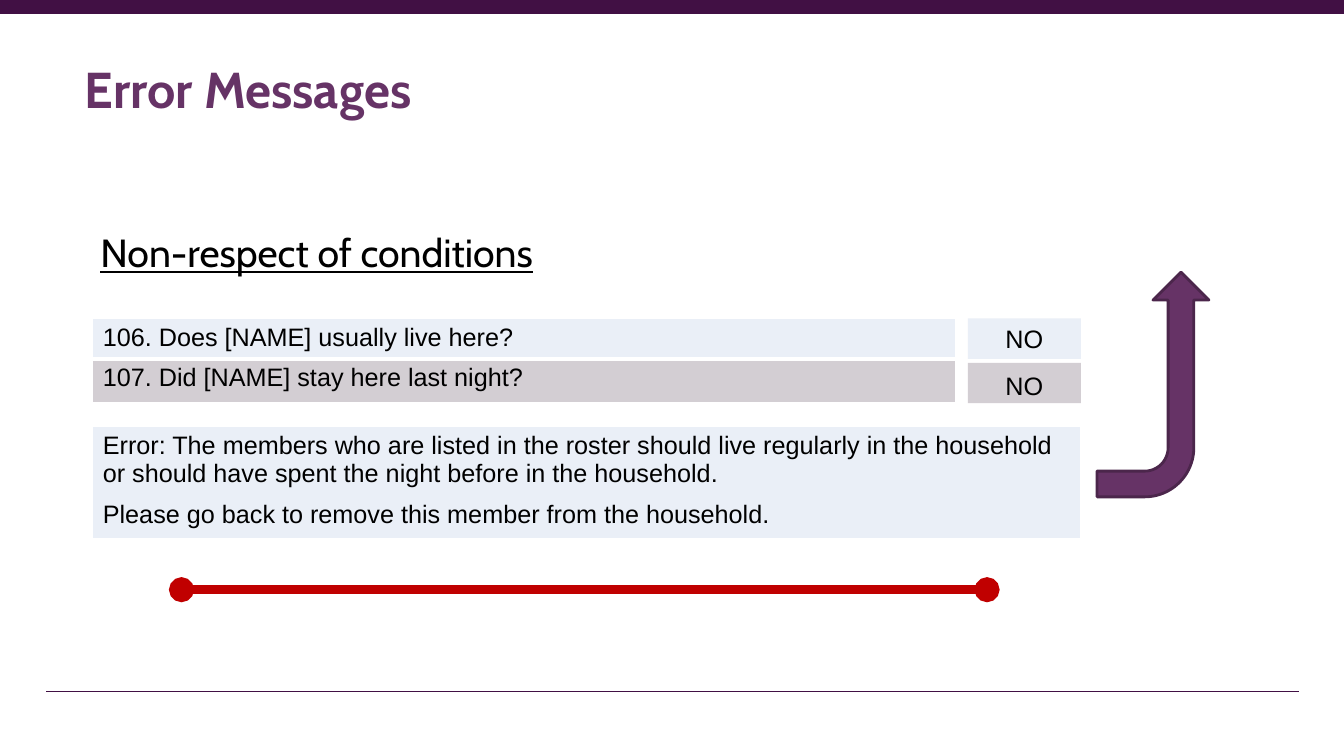
from lxml import etree
from pptx import Presentation, util as u
from pptx.dml.color import RGBColor
from pptx.enum import shapes, text
from pptx.oxml import ns

PLUM = RGBColor(0x66, 0x33, 0x66)
DARK = RGBColor(0x41, 0x10, 0x44)
EDGE = RGBColor(0x4B, 0x26, 0x4B)
RED = RGBColor(0xC0, 0x00, 0x00)
PALE = RGBColor(0xEA, 0xEF, 0xF7)
MAUVE = RGBColor(0xD3, 0xCE, 0xD3)
BLACK = RGBColor(0, 0, 0)
WHITE = RGBColor(0xFF, 0xFF, 0xFF)


def write(frame, *lines, size=18, font="Arial", color=BLACK, bold=False,
          under=False, align=None, gap=0, space=None):
    frame.word_wrap = True
    for i, line in enumerate(lines):
        para = frame.paragraphs[0] if i == 0 else frame.add_paragraph()
        para.alignment = align
        para.line_spacing = space
        para.space_before = u.Pt(gap if i else 0)
        run = para.add_run()
        run.text = line
        run.font.size = u.Pt(size)
        run.font.name = font
        run.font.color.rgb = color
        run.font.bold = bold
        run.font.underline = under


def inches(*sizes):
    return [u.Inches(size) for size in sizes]


class Deck:
    def __init__(self):
        self.show = Presentation()
        self.show.slide_width, self.show.slide_height = inches(13.33, 7.5)
        self.slide = self.show.slides.add_slide(self.show.slide_layouts[5])
        self.items = self.slide.shapes

    def title(self, words, *box):
        head = self.items.title
        head.left, head.top, head.width, head.height = inches(*box)
        frame = head.text_frame
        frame.auto_size = text.MSO_AUTO_SIZE.NONE
        frame.vertical_anchor = text.MSO_ANCHOR.TOP
        write(frame, words, size=36, font="Cabin", color=PLUM, bold=True,
              align=text.PP_ALIGN.LEFT)

    def label(self, words, *box, **style):
        frame = self.items.add_textbox(*inches(*box)).text_frame
        write(frame, words, align=text.PP_ALIGN.CENTER, **style)

    def line(self, start, end, color, width, dots=False):
        line = self.items.add_connector(
            shapes.MSO_CONNECTOR.STRAIGHT, *inches(*start, *end))
        line.line.color.rgb = color
        line.line.width = u.Pt(width)
        props = line._element.spPr
        if dots:
            for name in ("a:headEnd", "a:tailEnd"):
                etree.SubElement(props.ln, ns.qn(name), type="oval")
        etree.SubElement(props, ns.qn("a:effectLst"))

    def shape(self, kind, *box, fill, edge=None):
        item = self.items.add_shape(kind, *inches(*box))
        item.shadow.inherit = False
        item.fill.solid()
        item.fill.fore_color.rgb = fill
        if edge is None:
            item.line.fill.background()
        else:
            item.line.color.rgb = edge
            item.line.width = u.Pt(2)
        return item

    def border(self, cell, base):
        props = cell._tc.get_or_add_tcPr()
        for i, side in enumerate("LRTB"):
            width = u.Pt(base if side == "B" else 1)
            edge = etree.Element(ns.qn("a:ln" + side), w=str(width))
            fill = etree.SubElement(edge, ns.qn("a:solidFill"))
            etree.SubElement(fill, ns.qn("a:srgbClr"), val=str(WHITE))
            props.insert(i, edge)

    def table(self, left, top, width, rows):
        high = sum(row[0] for row in rows)
        grid = self.items.add_table(
            len(rows), 1, *inches(left, top, width, high)).table
        grid.first_row = grid.horz_banding = False
        for i, (tall, fill, base, lines) in enumerate(rows):
            grid.rows[i].height = u.Inches(tall)
            cell = grid.cell(i, 0)
            cell.fill.solid()
            cell.fill.fore_color.rgb = fill
            self.border(cell, base)
            write(cell.text_frame, *lines, gap=9)


def main():
    deck = Deck()
    deck.line((12.88, 6.86), (0.46, 6.86), DARK, 1.25)
    deck.line((0, 0.07), (13.33, 0.07), DARK, 10.25)
    deck.title("Error Messages", 0.74, 0.53, 11.84, 1.22)
    deck.label("Non-respect of conditions", 0.64, 2.27, 5, 0.67,
               size=28, font="Cabin", under=True, space=0.9)
    deck.table(0.92, 3.16, 8.56, [
        (0.4, PALE, 3, ["106. Does [NAME] usually live here?"]),
        (0.43, MAUVE, 1, ["107. Did [NAME] stay here last night?"]),
    ])
    deck.table(0.92, 4.23, 9.8, [(1.06, PALE, 3, [
        "Error: The members who are listed in the roster should live "
        "regularly in the household or should have spent the night before "
        "in the household.",
        "Please go back to remove this member from the household.",
    ])])
    for top, fill, place in ((3.6, MAUVE, 3.62), (3.16, PALE, 3.16)):
        deck.shape(shapes.MSO_SHAPE.RECTANGLE, 9.6, top, 1.12, 0.4, fill=fill)
        deck.label("NO", 9.76, place, 0.8, 0.4)
    deck.line((1.8, 5.85), (9.79, 5.85), RED, 6, dots=True)
    arrow = deck.shape(shapes.MSO_SHAPE.BENT_ARROW, 10.32, 3.26, 2.23, 1.11,
                       fill=PLUM, edge=EDGE)
    arrow.rotation = 270
    arrow._element.spPr.xfrm.set("flipV", "1")
    for i, value in enumerate((0.23, 0.25, 0.25, 0.44)):
        arrow.adjustments[i] = value
    deck.show.save("out.pptx")


if __name__ == "__main__":
    main()
